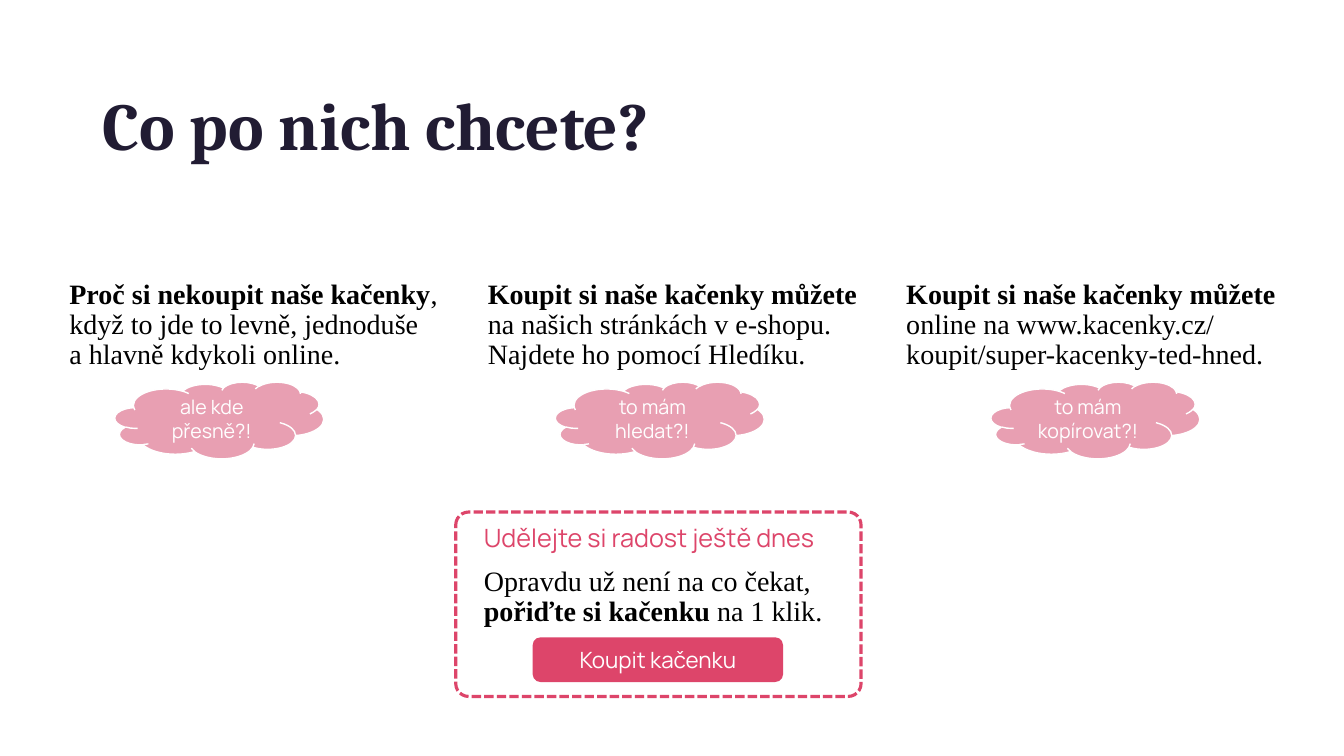
from dataclasses import dataclass

from lxml import etree
from pptx import Presentation, util as u
from pptx.dml.color import RGBColor
from pptx.enum import dml, shapes, text
from pptx.oxml.ns import qn


@dataclass(frozen=True)
class Theme:
    """Colours, fonts and type sizes of the slide."""
    ink: str = "211C33"
    black: str = "000000"
    white: str = "FFFFFF"
    pink: str = "DD456A"
    cloud: str = "D24166"
    heading: str = "Cambria"
    body: str = "Times New Roman"
    accent: str = "Manrope"
    title_pt: int = 48
    body_pt: int = 20
    offer_pt: int = 18
    button_pt: int = 16
    cloud_pt: int = 14


T = Theme()
SCALE = 9144
COLUMN_LEFT, COLUMN_STEP, COLUMN_TOP = 59, 415, 273
COLUMNS = [
    ([("Proč si nekoupit naše kačenky", True),
      (", když to jde to levně, jednoduše\na hlavně kdykoli online.", False)],
     "ale kde přesně?!", 55),
    ([("Koupit si naše kačenky můžete", True),
      (" na našich stránkách v e-shopu. Najdete ho pomocí Hledíku.", False)],
     "to mám hledat?!", 77),
    ([("Koupit si naše kačenky můžete ", True),
      ("online na www.kacenky.cz/\nkoupit/super-kacenky-ted-hned.", False)],
     "to mám kopírovat?!", 94),
]


def px(*lengths):
    """Turn px lengths into EMU."""
    return [u.Emu(n * SCALE) for n in lengths]


def write(p, parts, font=T.body, size=T.body_pt, color=T.black,
          align=text.PP_ALIGN.LEFT, spacing=0.9, before=0):
    """Fill a paragraph with (text, bold) parts, breaking lines at newlines."""
    p.alignment, p.line_spacing, p.space_before = align, spacing, u.Pt(before)
    for content, bold in parts:
        for i, line in enumerate(content.split("\n")):
            if i:
                p.add_line_break()
            r = p.add_run()
            r.text = line
            r.font.name, r.font.size, r.font.bold = font, u.Pt(size), bold
            r.font.color.rgb = RGBColor.from_string(color)


def add_text(s, box):
    """Add a wrapping text box and return its frame."""
    tf = s.shapes.add_textbox(*px(*box)).text_frame
    tf.word_wrap = True
    return tf


def add_shape(s, kind, box, fill=None, line=T.pink, width=1, label="", size=T.button_pt):
    """Add a preset shape with an optional fill and centred label."""
    sp = s.shapes.add_shape(kind, *px(*box))
    sp.shadow.inherit = False
    if fill:
        sp.fill.solid()
        sp.fill.fore_color.rgb = RGBColor.from_string(fill)
    else:
        sp.fill.background()
    sp.line.color.rgb = RGBColor.from_string(line)
    sp.line.width = u.Pt(width)
    if label:
        tf = sp.text_frame
        tf.word_wrap = True
        tf.vertical_anchor = text.MSO_ANCHOR.MIDDLE
        write(tf.paragraphs[0], [(label, False)], font=T.accent, size=size,
              color=T.white, align=text.PP_ALIGN.CENTER, spacing=1.0)
    return sp


def add_title(s, box, title):
    """Place and format the title placeholder."""
    sp = s.shapes.title
    sp.left, sp.top, sp.width, sp.height = px(*box)
    tf = sp.text_frame
    tf.auto_size = text.MSO_AUTO_SIZE.NONE
    tf.vertical_anchor = text.MSO_ANCHOR.MIDDLE
    write(tf.paragraphs[0], [(title, True)], font=T.heading, size=T.title_pt, color=T.ink)


def add_column(s, box, parts, objection, indent):
    """Add a sales message with the reader's objection in a cloud below it."""
    x, y, w, h = box
    write(add_text(s, box).paragraphs[0], parts)
    sp = add_shape(s, shapes.MSO_SHAPE.CLOUD, (x + indent, y + h, 207, 76), fill=T.cloud,
                   line=T.white, label=objection, size=T.cloud_pt)
    color = sp.fill._xPr.find(qn("a:solidFill"))[0]
    etree.SubElement(color, qn("a:alpha")).set("val", "50000")


def add_offer(s, box):
    """Add the dashed offer card with its text and button."""
    x, y, w, h = box
    sp = add_shape(s, shapes.MSO_SHAPE.ROUNDED_RECTANGLE, box, width=2.25)
    sp.adjustments[0] = 0.07
    sp.line.dash_style = dml.MSO_LINE.SQUARE_DOT
    tf = add_text(s, (x + 18, y + 9, w, h - 9))
    write(tf.paragraphs[0], [("Udělejte si radost ještě dnes", False)],
          font=T.accent, size=T.offer_pt, color=T.pink)
    write(tf.add_paragraph(), [("Opravdu už není na co čekat,\n", False),
                               ("pořiďte si kačenku", True), (" na 1 klik.", False)], before=10)
    add_shape(s, shapes.MSO_SHAPE.ROUNDED_RECTANGLE, (x + 77, y + 125, 247, 43),
              fill=T.pink, label="Koupit kačenku")


def main():
    """Build the slide and save it."""
    prs = Presentation()
    prs.slide_width, prs.slide_height = px(1333, 750)
    s = prs.slides.add_slide(prs.slide_layouts[5])
    add_title(s, (92, 71, 1150, 114), "Co po nich chcete?")
    for i, column in enumerate(COLUMNS):
        add_column(s, (COLUMN_LEFT + i * COLUMN_STEP, COLUMN_TOP, 394, 106), *column)
    add_offer(s, (452, 508, 402, 183))
    prs.save("out.pptx")


if __name__ == "__main__":
    main()
